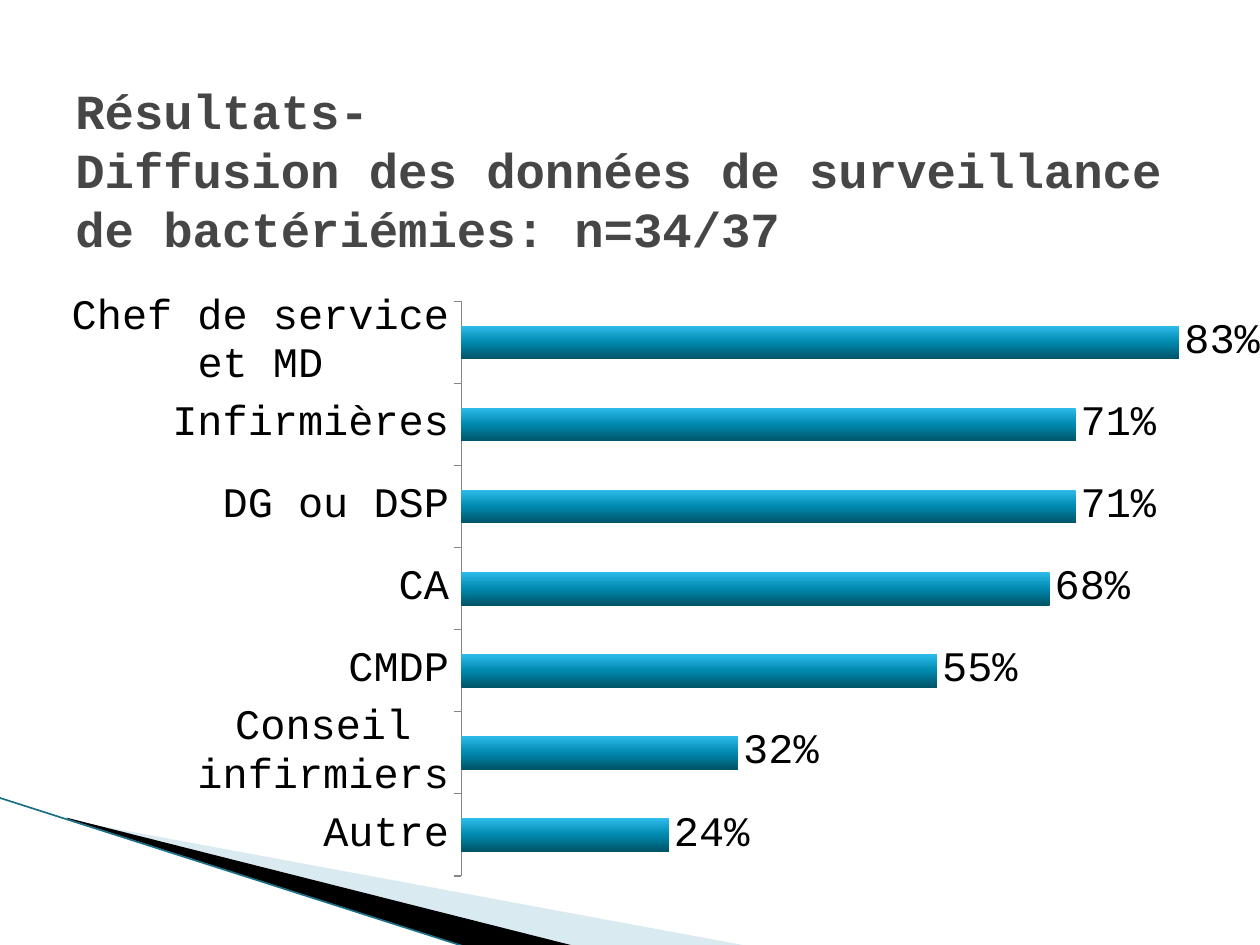
from copy import deepcopy
from dataclasses import dataclass

from lxml.etree import SubElement
from pptx import Presentation
from pptx.chart.data import CategoryChartData
from pptx.dml.color import RGBColor
from pptx.enum.chart import XL_CHART_TYPE, XL_LABEL_POSITION, XL_TICK_MARK
from pptx.enum.text import MSO_ANCHOR
from pptx.oxml import parse_xml
from pptx.oxml.ns import nsdecls, qn
from pptx.util import Inches, Pt

FONT = "Courier New"


@dataclass
class Wedge:
    box: tuple[float, float, float, float]
    points: list[tuple[float, float]]
    color: str
    alpha: int = 100


WEDGES = [
    Wedge(
        (0.78, 5.47, 4.16, 1.58),
        [(0.55, 6.51), (5.95, 7.51), (4.56, 7.51), (0.55, 6.5)], "A0CBDC", 40,
    ),
    Wedge(
        (-0.06, 6.33, 4.16, 0.92),
        [(0.53, 6.49), (4.57, 7.51), (3.72, 7.52), (0.54, 6.5)], "000000",
    ),
]
RATES = {
    "Autre": 0.24,
    "Conseil infirmiers": 0.32,
    "CMDP": 0.55,
    "CA": 0.68,
    "DG ou DSP": 0.71,
    "Infirmières": 0.71,
    "Chef de service et MD": 0.83,
}
SHADES = [(0, "2DBBEA"), (0.5, "0089AF"), (1, "005468")]
PLOT = {"x": 0.35, "y": 0.077, "w": 0.65, "h": 0.872}


def rgb(code: str) -> RGBColor:
    return RGBColor.from_string(code)


def set_font(font, size: float, color: str = "000000", bold: bool = False) -> None:
    font.name = FONT
    font.size = Pt(size)
    font.bold = bold
    font.color.rgb = rgb(color)


def add_text(slide, text: str, *, box: tuple[float, ...], **style) -> None:
    frame = slide.shapes.add_textbox(*map(Inches, box)).text_frame
    frame.word_wrap = True
    frame.vertical_anchor = MSO_ANCHOR.MIDDLE
    line = frame.paragraphs[0]
    line.text = text
    for run in line.runs:
        set_font(run.font, **style)


def set_frame(shape, box: tuple[float, ...]) -> None:
    left, top, width, height = map(Inches, box)
    right, down = shape.left - left, shape.top - top
    trace = shape._element.spPr.find(".//" + qn("a:path"))
    trace.set("w", str(width))
    trace.set("h", str(height))
    for spot in trace.iter(qn("a:pt")):
        spot.set("x", str(int(spot.get("x")) + right))
        spot.set("y", str(int(spot.get("y")) + down))
    shape.left, shape.top = left, top
    shape.width, shape.height = width, height


def add_wedge(slide, wedge: Wedge) -> None:
    start, *rest = [(Inches(x), Inches(y)) for x, y in wedge.points]
    pen = slide.shapes.build_freeform(*start, scale=1.0)
    pen.add_line_segments(rest, close=True)
    shape = pen.convert_to_shape()
    set_frame(shape, wedge.box)
    shape.shadow.inherit = False
    shape.line.fill.background()
    shape.fill.solid()
    shape.fill.fore_color.rgb = rgb(wedge.color)
    if wedge.alpha < 100:
        tint = shape.fill._xPr.find(".//" + qn("a:srgbClr"))
        SubElement(tint, qn("a:alpha"), val=str(wedge.alpha * 1000))


def add_edge(slide) -> None:
    ends = map(Inches, (-0.01, 6.33, 3.71, 7.52))
    edge = slide.shapes.add_connector(1, *ends)
    edge.line.color.rgb = rgb("1B6F86")
    edge.line.width = Pt(0.95)
    SubElement(edge._element.spPr, qn("a:effectLst"))


def shade(fill) -> None:
    fill.gradient()
    fill.gradient_angle = 270
    stops = fill._fill._gradFill.find(qn("a:gsLst"))
    stops.append(deepcopy(stops[-1]))
    for stop, (place, color) in zip(fill.gradient_stops, SHADES):
        stop.position = place
        stop.color.rgb = rgb(color)


def place_plot(chart) -> None:
    area = chart._chartSpace.chart.plotArea
    for old in area.findall(qn("c:layout")):
        area.remove(old)
    modes = '<c:xMode val="edge"/><c:yMode val="edge"/>'
    sizes = "".join(f'<c:{key} val="{part}"/>' for key, part in PLOT.items())
    area.insert(0, parse_xml(
        f'<c:layout {nsdecls("c")}><c:manualLayout><c:layoutTarget val="inner"/>'
        f"{modes}{sizes}</c:manualLayout></c:layout>"
    ))


def add_bars(slide) -> None:
    data = CategoryChartData(number_format="0%")
    data.categories = list(RATES)
    data.add_series("Series 1", list(RATES.values()))
    box = map(Inches, (0.26, 1.99, 9.74, 5.23))
    chart = slide.shapes.add_chart(XL_CHART_TYPE.BAR_CLUSTERED, *box, data).chart
    chart.has_legend = False
    chart.has_title = False
    set_font(chart.font, 18)
    place_plot(chart)

    side = chart.category_axis
    side.major_tick_mark = XL_TICK_MARK.OUTSIDE
    side.format.line.color.rgb = rgb("868686")
    set_font(side.tick_labels.font, 24)
    scale = chart.value_axis
    scale.visible = False
    scale.has_major_gridlines = False
    scale.minimum_scale = 0
    scale.maximum_scale = 0.92
    scale.tick_labels.number_format = "0%"
    scale.tick_labels.number_format_is_linked = False

    plot = chart.plots[0]
    plot.gap_width = 150
    plot.vary_by_categories = False
    shade(plot.series[0].format.fill)
    plot.has_data_labels = True
    labels = plot.data_labels
    labels.show_value = True
    labels.number_format = "0%"
    labels.number_format_is_linked = False
    labels.position = XL_LABEL_POSITION.OUTSIDE_END
    set_font(labels.font, 24)


def main() -> None:
    deck = Presentation()
    deck.slide_width = Inches(10)
    deck.slide_height = Inches(7.5)
    slide = deck.slides.add_slide(deck.slide_layouts[6])
    for wedge in WEDGES:
        add_wedge(slide, wedge)
    add_edge(slide)
    add_text(
        slide,
        "Résultats-\nDiffusion des données de surveillance de bactériémies: n=34/37",
        box=(0.5, 0.69, 9.17, 1.3), size=28, color="464646", bold=True,
    )
    add_bars(slide)
    deck.save("out.pptx")


if __name__ == "__main__":
    main()
